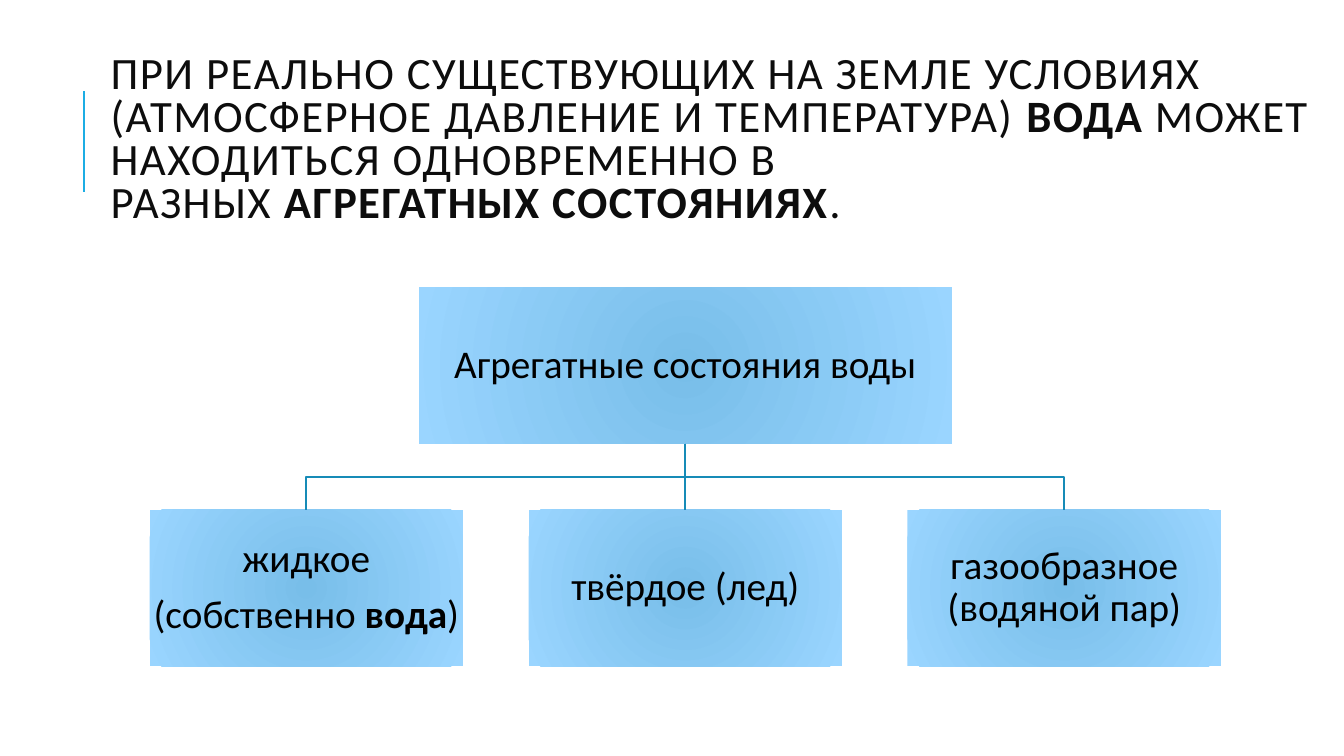
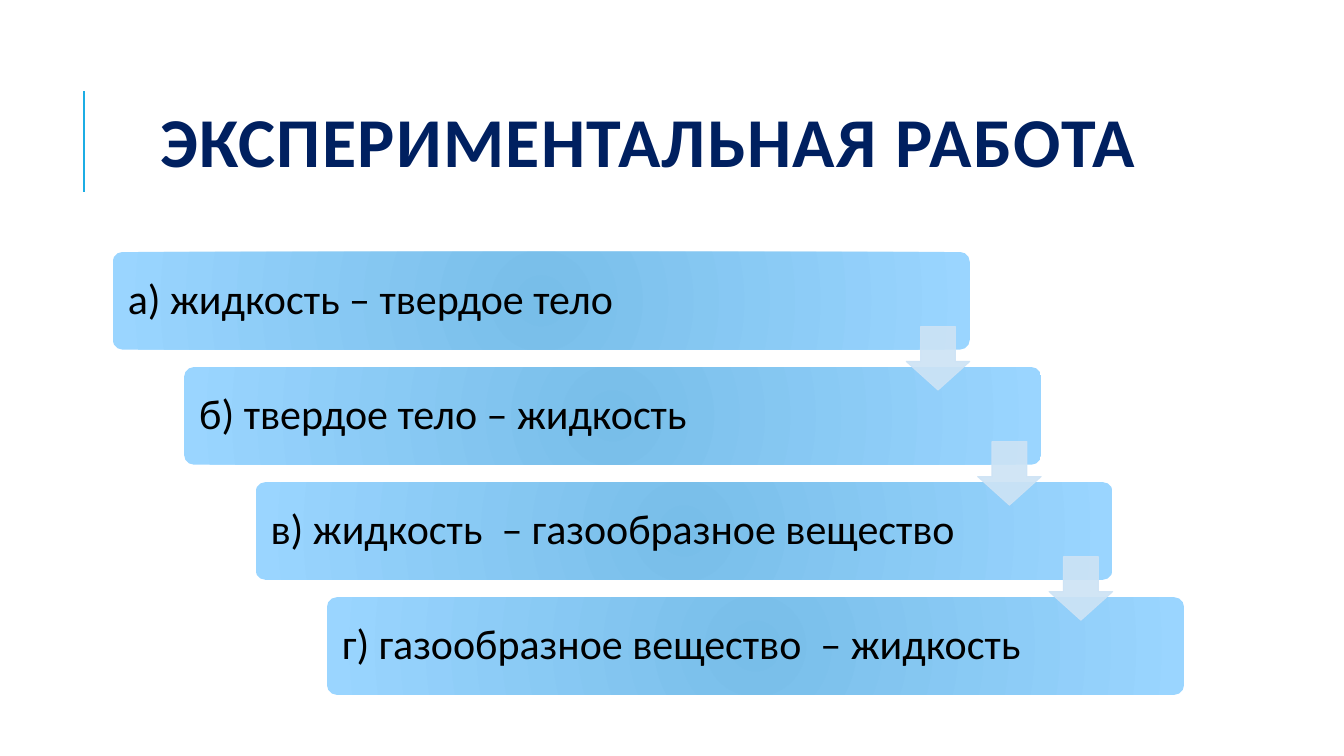
"""Two slides on the states of water: a tree of states and a staircase of experiments."""
from lxml import etree
from pptx import Presentation
from pptx import util as u
from pptx.dml.color import RGBColor
from pptx.enum import shapes, text
from pptx.oxml.ns import qn

FONT = "Calibri"
HARD = chr(160)
BLACK = RGBColor(0x00, 0x00, 0x00)
INK = RGBColor(0x0D, 0x0D, 0x0D)
NAVY = RGBColor(0x00, 0x20, 0x60)
CYAN = RGBColor(0x1C, 0xAD, 0xE4)
TEAL = RGBColor(0x16, 0x8B, 0xB7)
CORE = RGBColor(0x78, 0xBE, 0xE9)
EDGE = RGBColor(0x9A, 0xD5, 0xFF)
PALE = RGBColor(0xCD, 0xE3, 0xF5)
LEFT, MID = text.PP_ALIGN.LEFT, text.PP_ALIGN.CENTER
RECT = shapes.MSO_SHAPE.RECTANGLE
ROUND = shapes.MSO_SHAPE.ROUNDED_RECTANGLE
ARROW = shapes.MSO_SHAPE.DOWN_ARROW


def write(shape, lines, size, color, align, pitch, after=0):
    """Fill a shape with paragraphs; words between stars are bold."""
    frame = shape.text_frame
    frame.word_wrap = True
    frame.vertical_anchor = text.MSO_ANCHOR.MIDDLE
    for i, line in enumerate(lines):
        para = frame.add_paragraph() if i else frame.paragraphs[0]
        para.alignment, para.line_spacing = align, pitch
        para.space_after = u.Pt(after)
        para.font.name, para.font.size = FONT, u.Pt(size)
        para.font.color.rgb = color
        for j, part in enumerate(line.split("*")):
            run = para.add_run()
            run.text = part
            if j % 2:
                run.font.bold = True


def rule(slide, x1, y1, x2, y2, color, width):
    """Draw a straight line without a shadow."""
    line = slide.shapes.add_connector(
        shapes.MSO_CONNECTOR.STRAIGHT, u.Cm(x1), u.Cm(y1), u.Cm(x2), u.Cm(y2))
    line.line.color.rgb = color
    line.line.width = u.Pt(width)
    etree.SubElement(line._element.spPr, qn("a:effectLst"))
    return line


deck = Presentation()
deck.slide_width, deck.slide_height = u.Cm(33.87), u.Cm(19.05)
states, tests = [deck.slides.add_slide(deck.slide_layouts[6]) for _ in range(2)]

titles = [
    (states, 2.54, 1.47, 30.76, 32, INK, LEFT, False,
     "ПРИ РЕАЛЬНО СУЩЕСТВУЮЩИХ НА ЗЕМЛЕ УСЛОВИЯХ (АТМОСФЕРНОЕ ДАВЛЕНИЕ И ТЕМПЕРАТУРА)"
     f"{HARD}*ВОДА*{HARD}МОЖЕТ НАХОДИТЬСЯ ОДНОВРЕМЕННО В "
     f"РАЗНЫХ{HARD}*АГРЕГАТНЫХ{HARD}СОСТОЯНИЯХ*."),
    (tests, 2.84, 1.63, 27, 50, NAVY, MID, True, "ЭКСПЕРИМЕНТАЛЬНАЯ РАБОТА"),
]
for slide, x, y, wide, size, color, align, bold, words in titles:
    rule(slide, 2.12, 4.83, 2.12, 2.29, CYAN, 1.5)
    title = slide.shapes.add_textbox(u.Cm(x), u.Cm(y), u.Cm(wide), u.Cm(4.17))
    write(title, [words], size, color, align, 0.8)
    para = title.text_frame.paragraphs[0]
    if bold:
        para.font.bold = True
    for run in para.runs:
        run._r.get_or_add_rPr().set("spc", "100")

kinds = [
    ["жидкое", f"(собственно{HARD}*вода*)"],
    ["твёрдое (лед)"],
    ["газообразное (водяной пар)"],
]
steps = [
    "а) жидкость – твердое тело",
    "б) твердое тело – жидкость",
    "в) жидкость  – газообразное вещество",
    "г) газообразное вещество  – жидкость",
]
LEAF_X, LEAF_Y, LEAF_W, LEAF_GAP, TALL = 3.77, 12.85, 7.9, 9.55, 3.94
ROOT_X, ROOT_Y, ROOT_W = 10.55, 7.24, 13.44
STEP_X, STEP_Y, STEP_DX, STEP_DY = 2.84, 6.35, 1.8, 2.9

boxes = [(states, RECT, ROOT_X, ROOT_Y, ROOT_W, TALL, ["Агрегатные состояния воды"])]
boxes += [(states, RECT, LEAF_X + i * LEAF_GAP, LEAF_Y, LEAF_W, TALL, lines)
          for i, lines in enumerate(kinds)]
boxes += [(tests, ROUND, STEP_X + i * STEP_DX, STEP_Y + i * STEP_DY, 21.6, 2.46, [line])
          for i, line in enumerate(steps)]
drawn = []
for slide, kind, x, y, wide, tall, lines in boxes:
    box = slide.shapes.add_shape(kind, u.Cm(x), u.Cm(y), u.Cm(wide), u.Cm(tall))
    box.shadow.inherit = False
    box.line.fill.background()
    box.fill.gradient()
    for stop, color in zip(box.fill.gradient_stops, (CORE, EDGE)):
        stop.color.rgb = color
    grad = box._element.spPr.find(qn("a:gradFill"))
    grad.remove(grad.find(qn("a:lin")))
    ring = etree.SubElement(grad, qn("a:path"), {"path": "circle"})
    etree.SubElement(ring, qn("a:fillToRect"), {side: "100000" for side in "ltrb"})
    frame = box.text_frame
    inset = u.Cm(0.05 if kind == RECT else 0.31)
    frame.margin_left = frame.margin_right = inset
    frame.margin_top = frame.margin_bottom = u.Cm(0.05)
    if kind == RECT:
        write(box, lines, 28, BLACK, MID, 0.9, 9.8)
    else:
        box.adjustments[0] = 0.1
        write(box, lines, 30, BLACK, LEFT, 0.9, 9.8)
    drawn.append(box)

root, leaf = drawn[0], drawn[2]
mids = [LEAF_X + LEAF_W / 2 + i * LEAF_GAP for i in range(3)]
foot = ROOT_Y + TALL
bus = (foot + LEAF_Y) / 2
stem = rule(states, mids[1], foot, mids[1], LEAF_Y, TEAL, 1.25)
stem.begin_connect(root, 2)
stem.end_connect(leaf, 0)
for x in (mids[0], mids[2]):
    pen = states.shapes.build_freeform(u.Cm(mids[1]), u.Cm(foot))
    pen.add_line_segments(
        [(u.Cm(mids[1]), u.Cm(bus)), (u.Cm(x), u.Cm(bus)), (u.Cm(x), u.Cm(LEAF_Y))],
        close=False)
    elbow = pen.convert_to_shape()
    elbow.shadow.inherit = False
    elbow.fill.background()
    elbow.line.color.rgb = TEAL
    elbow.line.width = u.Pt(1.25)

for i in range(3):
    arrow = tests.shapes.add_shape(
        ARROW, u.Cm(STEP_X + 20 + i * STEP_DX), u.Cm(STEP_Y + 1.88 + i * STEP_DY),
        u.Cm(1.6), u.Cm(1.6))
    arrow.shadow.inherit = False
    arrow.adjustments[0], arrow.adjustments[1] = 0.55, 0.45
    arrow.fill.solid()
    arrow.fill.fore_color.rgb = PALE
    arrow.line.color.rgb = PALE
    arrow.line.width = u.Pt(0.75)
    for tint in arrow._element.spPr.iter(qn("a:srgbClr")):
        etree.SubElement(tint, qn("a:alpha"), {"val": "90000"})

deck.save("out.pptx")
